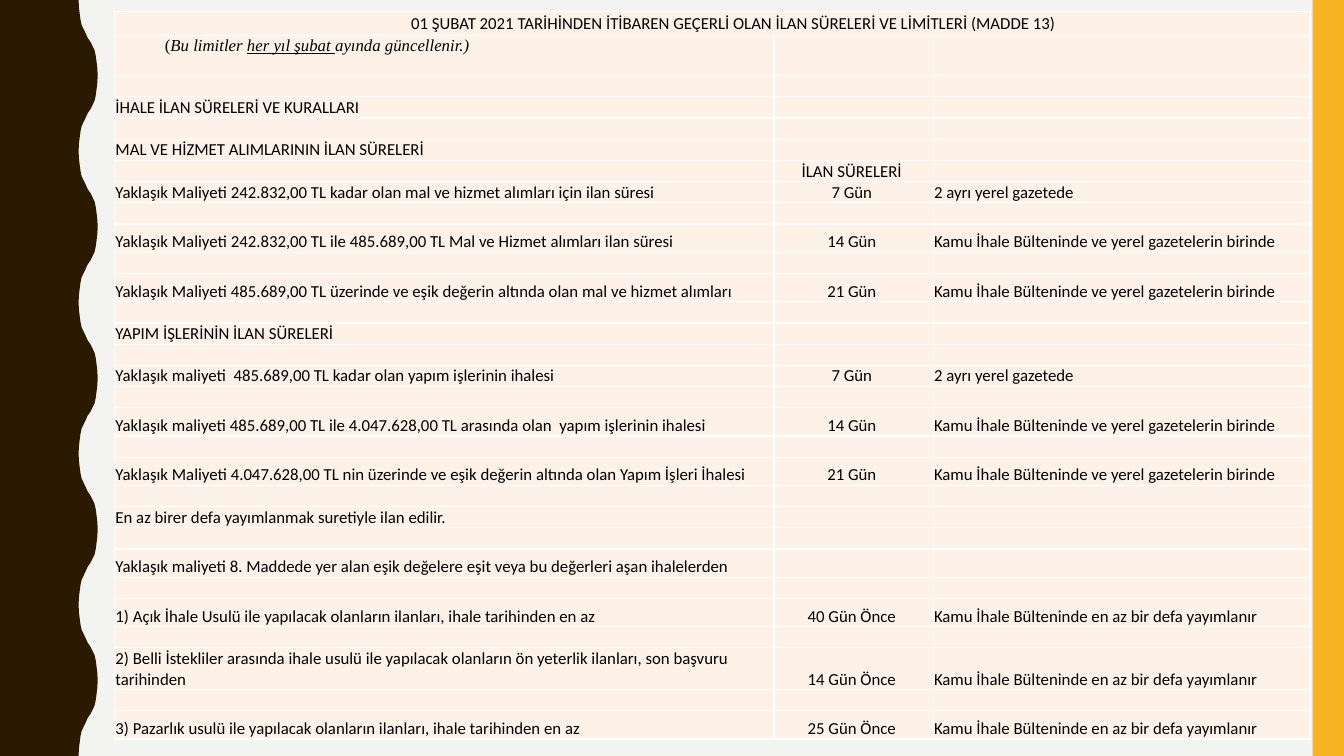
"""Build the slide of tender notice periods and limits."""
from dataclasses import dataclass

from lxml import etree
from pptx import Presentation
from pptx.dml.color import RGBColor
from pptx.enum import shapes, text
from pptx.oxml import ns
from pptx.util import Pt


@dataclass(frozen=True)
class Theme:
    """Colours, fonts and type size of the slide."""
    back: str = "F3F3F2"
    wave: str = "2A1A00"
    bar: str = "F8B323"
    cell: str = "FEF2E8"
    rule: str = "FFFFFF"
    ink: str = "000000"
    font: str = "Calibri"
    serif: str = "Times New Roman"
    size: float = 12


THEME = Theme()
WIDE, HIGH = 960, 540
COLS = (470.9, 113.8, 269.3)
HEAD, LOW, TALL, PAIR = 17.5, 15.1, 20.2, 29
TITLE = "01 ŞUBAT 2021 TARİHİNDEN İTİBAREN GEÇERLİ OLAN İLAN SÜRELERİ VE LİMİTLERİ (MADDE 13)"
NOTE = (("(", False, False), ("Bu limitler ", True, False),
        ("her yıl şubat ", True, True), ("ayında güncellenir.)", True, False))
LOCAL = "2 ayrı yerel gazetede"
BOTH = "Kamu İhale Bülteninde ve yerel gazetelerin birinde"
ONCE = "Kamu İhale Bülteninde en az bir defa yayımlanır"
ITEMS = (
    (LOW, "İHALE İLAN SÜRELERİ VE KURALLARI"),
    (LOW, "MAL VE HİZMET ALIMLARININ İLAN SÜRELERİ"),
    (LOW, "Yaklaşık Maliyeti 242.832,00 TL kadar olan mal ve hizmet alımları için ilan süresi",
     "7 Gün ", LOCAL),
    (TALL, "Yaklaşık Maliyeti 242.832,00 TL ile 485.689,00 TL Mal ve Hizmet alımları ilan süresi",
     "14 Gün ", BOTH),
    (TALL, "Yaklaşık Maliyeti 485.689,00 TL üzerinde ve eşik değerin altında olan mal ve hizmet alımları",
     "21 Gün ", BOTH),
    (LOW, "YAPIM İŞLERİNİN İLAN SÜRELERİ"),
    (LOW, "Yaklaşık maliyeti  485.689,00 TL kadar olan yapım işlerinin ihalesi",
     "7 Gün ", LOCAL),
    (TALL, "Yaklaşık maliyeti 485.689,00 TL ile 4.047.628,00 TL arasında olan  yapım işlerinin ihalesi",
     "14 Gün ", BOTH),
    (TALL, "Yaklaşık Maliyeti 4.047.628,00 TL nin üzerinde ve eşik değerin altında olan Yapım İşleri İhalesi",
     "21 Gün ", BOTH),
    (LOW, "En az birer defa yayımlanmak suretiyle ilan edilir."),
    (TALL, "Yaklaşık maliyeti 8. Maddede yer alan eşik değelere eşit veya bu değerleri aşan ihalelerden"),
    (TALL, "1) Açık İhale Usulü ile yapılacak olanların ilanları, ihale tarihinden en az",
     "40 Gün Önce ", ONCE),
    (PAIR, "2) Belli İstekliler arasında ihale usulü ile yapılacak olanların ön yeterlik ilanları, "
     "son başvuru tarihinden", "14 Gün Önce ", ONCE),
    (TALL, "3) Pazarlık usulü ile yapılacak olanların ilanları, ihale tarihinden en az",
     "25 Gün Önce ", ONCE),
)


def paint(fill, tone):
    """Give a fill one solid colour."""
    fill.solid()
    fill.fore_color.rgb = RGBColor.from_string(tone)


def style(run, face=THEME.font):
    """Set the type of a run."""
    run.font.name = face
    run.font.size = Pt(THEME.size)
    run.font.color.rgb = RGBColor.from_string(THEME.ink)


def finish(shape, tone):
    """Colour a shape and drop its line and shadow."""
    paint(shape.fill, tone)
    shape.line.fill.background()
    shape.shadow.inherit = False


def add_wave(slide):
    """Draw the dark band with the wavy right edge."""
    rise = [(56.2, 0), (56.4, 5.1), (57, 10), (57.6, 14.4),
            (58.4, 18), (59.8, 20.9), (61.2, 23.8), (62.6, 27)]
    half = rise + [(126 - x, 54 - y) for x, y in rise[-2::-1]]
    full = half + [(x, 108 - y) for x, y in half[-2::-1]]
    edge = [(x, y + 108 * turn) for turn in range(5) for x, y in full]
    form = slide.shapes.build_freeform(0, 0)
    form.add_line_segments([(Pt(x), Pt(y)) for x, y in edge + [(0, HIGH)]])
    finish(form.convert_to_shape(), THEME.wave)


def add_bar(slide):
    """Draw the bar at the right edge."""
    wide = 22.4
    bar = slide.shapes.add_shape(shapes.MSO_SHAPE.RECTANGLE,
                                 Pt(WIDE - wide), 0, Pt(wide), Pt(HIGH))
    finish(bar, THEME.bar)


def rule(cell):
    """Draw white lines on all sides of a cell."""
    props = cell._tc.get_or_add_tcPr()
    for spot, side in enumerate(("lnL", "lnR", "lnT", "lnB")):
        line = etree.Element(ns.qn(f"a:{side}"), w=str(Pt(1)))
        fill = etree.SubElement(line, ns.qn("a:solidFill"))
        etree.SubElement(fill, ns.qn("a:srgbClr"), val=THEME.rule)
        props.insert(spot, line)


def dress(cell):
    """Set the fill, insets, lines and empty text height of a cell."""
    paint(cell.fill, THEME.cell)
    rule(cell)
    cell.margin_left = cell.margin_right = cell.margin_top = Pt(0.5)
    cell.margin_bottom = 0
    cell.vertical_anchor = text.MSO_ANCHOR.BOTTOM
    last = cell.text_frame.paragraphs[0]._p.get_or_add_endParaRPr()
    last.set("sz", str(int(THEME.size * 100)))


def write(cell, words, mid=False):
    """Put plain words in a cell."""
    cell.text_frame.text = words
    para = cell.text_frame.paragraphs[0]
    para.alignment = text.PP_ALIGN.CENTER if mid else text.PP_ALIGN.LEFT
    for run in para.runs:
        style(run)


def write_note(cell):
    """Put the slanted note in a cell."""
    cell.vertical_anchor = text.MSO_ANCHOR.TOP
    cell.margin_left = Pt(35.8)
    for words, slant, under in NOTE:
        run = cell.text_frame.paragraphs[0].add_run()
        run.text = words
        style(run, THEME.serif)
        run.font.italic = slant
        run.font.underline = under


def add_grid(slide):
    """Build the table of notice periods."""
    highs = [HEAD, 28.6]
    for item in ITEMS:
        highs += [LOW, item[0]]
    grid = slide.shapes.add_table(len(highs), len(COLS), Pt(82), Pt(8),
                                  Pt(sum(COLS)), Pt(sum(highs))).table
    grid.first_row = grid.horz_banding = False
    for col, wide in zip(grid.columns, COLS):
        col.width = Pt(wide)
    for row, high in zip(grid.rows, highs):
        row.height = Pt(high)
    for cell in grid.iter_cells():
        dress(cell)
    head = grid.cell(0, 0)
    head.merge(grid.cell(0, 2))
    head.vertical_anchor = text.MSO_ANCHOR.MIDDLE
    head.margin_left = Pt(30.6)
    write(head, TITLE, True)
    write_note(grid.cell(1, 0))
    write(grid.cell(6, 1), "İLAN SÜRELERİ ", True)
    for spot, item in enumerate(ITEMS):
        for col, words in enumerate(item[1:]):
            write(grid.cell(3 + 2 * spot, col), words, col == 1)


def main():
    """Build and save the deck."""
    deck = Presentation()
    deck.slide_width, deck.slide_height = Pt(WIDE), Pt(HIGH)
    slide = deck.slides.add_slide(deck.slide_layouts[6])
    paint(slide.background.fill, THEME.back)
    add_wave(slide)
    add_bar(slide)
    add_grid(slide)
    deck.save("out.pptx")


if __name__ == "__main__":
    main()
